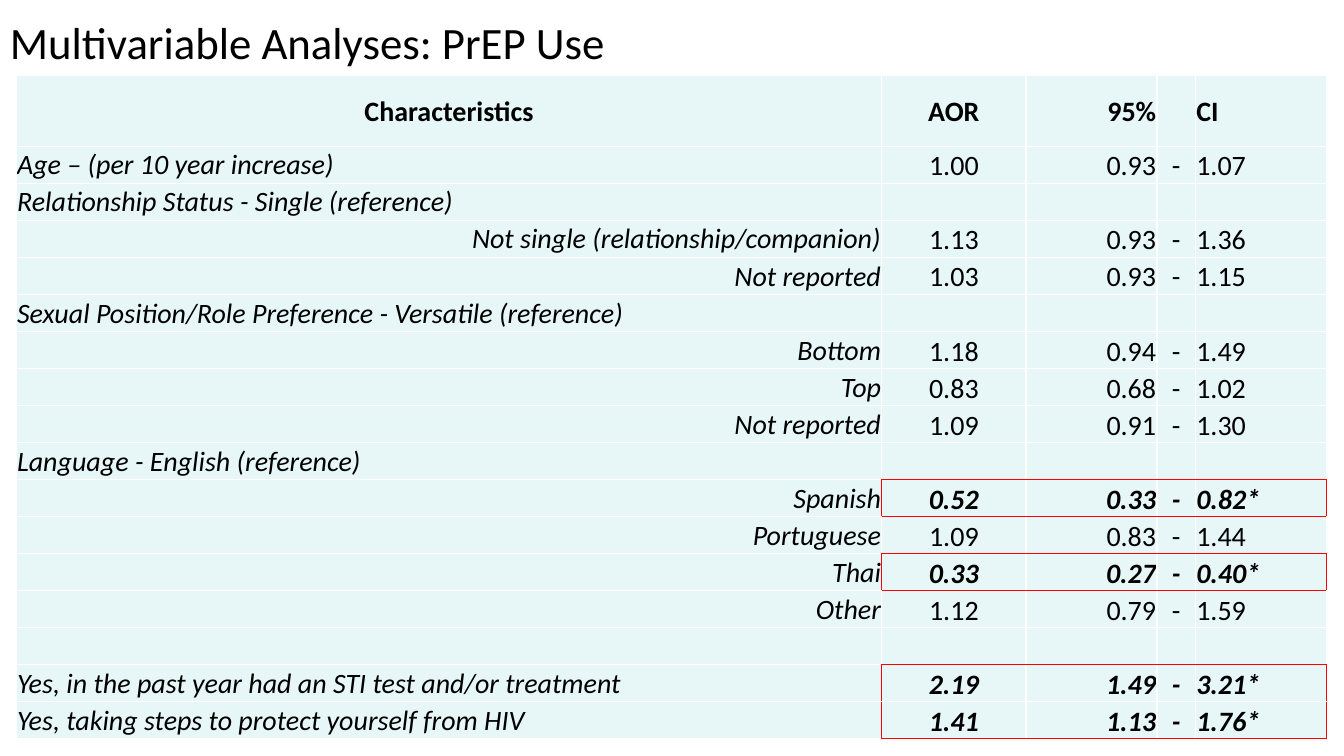
from lxml import etree
from pptx import Presentation
from pptx.dml.color import RGBColor
from pptx.enum.text import MSO_ANCHOR, PP_ALIGN
from pptx.oxml.ns import qn
from pptx.util import Cm, Pt

LEFT, CENTER, RIGHT = PP_ALIGN.LEFT, PP_ALIGN.CENTER, PP_ALIGN.RIGHT
MIDDLE, BOTTOM = MSO_ANCHOR.MIDDLE, MSO_ANCHOR.BOTTOM

BLACK, WHITE, RED, PALE_CYAN = "000000", "FFFFFF", "FF0000", "E7F7F8"
HEADER = ("Characteristics", "AOR", "95%", "", "CI")
HEADER_ALIGNS = (CENTER, CENTER, RIGHT, CENTER, LEFT)
COLUMN_WIDTHS = (21.8, 3.63, 3.3, 0.97, 3.3)
HEADER_HEIGHT = 1.78
RESULTS = [
    ("Age – (per 10 year increase)", LEFT, "1.00", "0.93", "1.07"),
    ("Relationship Status - Single (reference)", LEFT),
    ("Not single (relationship/companion)", RIGHT, "1.13", "0.93", "1.36"),
    ("Not reported", RIGHT, "1.03", "0.93", "1.15"),
    ("Sexual Position/Role Preference - Versatile (reference)", LEFT),
    ("Bottom", RIGHT, "1.18", "0.94", "1.49"),
    ("Top", RIGHT, "0.83", "0.68", "1.02"),
    ("Not reported", RIGHT, "1.09", "0.91", "1.30"),
    ("Language - English (reference)", LEFT),
    ("Spanish", RIGHT, "0.52", "0.33", "0.82*"),
    ("Portuguese", RIGHT, "1.09", "0.83", "1.44"),
    ("Thai", RIGHT, "0.33", "0.27", "0.40*"),
    ("Other", RIGHT, "1.12", "0.79", "1.59"),
    ("", LEFT),
    ("Yes, in the past year had an STI test and/or treatment", LEFT, "2.19", "1.49", "3.21*"),
    ("Yes, taking steps to protect yourself from HIV", LEFT, "1.41", "1.13", "1.76*"),
]


def color(hex_string):
    return RGBColor.from_string(hex_string)


def write(frame, text, size=20, align=LEFT, bold=False, italic=False, spacing=1.0):
    paragraph = frame.paragraphs[0]
    paragraph.alignment = align
    paragraph.line_spacing = spacing
    run = paragraph.add_run()
    run.text = text
    run.font.name = "Calibri"
    run.font.size = Pt(size)
    run.font.bold = bold
    run.font.italic = italic
    run.font.color.rgb = color(BLACK)


def add_title(slide, left, top, width, height):
    title = slide.shapes.add_textbox(Cm(left), Cm(top), Cm(width), Cm(height))
    title.text_frame.word_wrap = True
    title.text_frame.vertical_anchor = BOTTOM
    write(title.text_frame, "Multivariable Analyses: PrEP Use", size=32, spacing=0.9)


def is_significant(row, column):
    return 1 <= row <= len(RESULTS) and 1 <= column < len(HEADER) and RESULTS[row - 1][-1:][0] in SIGNIFICANT


SIGNIFICANT = {result[-1] for result in RESULTS if len(result) == 5 and result[-1].endswith("*")}


def draw_borders(cell, row, column):
    neighbors = {
        "a:lnL": (row, column - 1),
        "a:lnR": (row, column + 1),
        "a:lnT": (row - 1, column),
        "a:lnB": (row + 1, column),
    }
    properties = cell._tc.get_or_add_tcPr()
    for tag, neighbor in neighbors.items():
        on_outline = is_significant(row, column) != is_significant(*neighbor)
        border = etree.SubElement(properties, qn(tag), w=str(Pt(1)))
        fill = etree.SubElement(border, qn("a:solidFill"))
        etree.SubElement(fill, qn("a:srgbClr"), val=RED if on_outline else WHITE)


def fill_cell(cell, row, column, text, anchor, **text_format):
    draw_borders(cell, row, column)
    cell.fill.solid()
    cell.fill.fore_color.rgb = color(PALE_CYAN)
    cell.margin_left = cell.margin_right = cell.margin_top = Cm(0.02)
    cell.margin_bottom = 0
    cell.vertical_anchor = anchor
    if text:
        write(cell.text_frame, text, **text_format)


def add_results_table(slide, left, top, width, height):
    table = slide.shapes.add_table(
        len(RESULTS) + 1, len(HEADER), Cm(left), Cm(top), Cm(width), Cm(height)
    ).table
    table.first_row = table.horz_banding = False
    for column, share in zip(table.columns, COLUMN_WIDTHS):
        column.width = Cm(width * share / sum(COLUMN_WIDTHS))
    for row in table.rows:
        row.height = Cm((height - HEADER_HEIGHT) / len(RESULTS))
    table.rows[0].height = Cm(HEADER_HEIGHT)

    for column, (heading, align) in enumerate(zip(HEADER, HEADER_ALIGNS)):
        fill_cell(table.cell(0, column), 0, column, heading, MIDDLE, align=align, bold=True)
    for row, (label, label_align, *estimate) in enumerate(RESULTS, start=1):
        fill_cell(table.cell(row, 0), row, 0, label, MIDDLE, align=label_align, italic=True)
        ratio, low, high = estimate or ("", "", "")
        figures = (ratio, low, "-" if estimate else "", high)
        for column, figure in enumerate(figures, start=1):
            emphasis = is_significant(row, column)
            fill_cell(table.cell(row, column), row, column, figure, BOTTOM,
                      align=HEADER_ALIGNS[column], bold=emphasis, italic=emphasis)


def main():
    presentation = Presentation()
    presentation.slide_width = Cm(33.87)
    presentation.slide_height = Cm(19.05)
    slide = presentation.slides.add_slide(presentation.slide_layouts[6])
    add_title(slide, 0, -0.43, 26.67, 2.29)
    add_results_table(slide, 0.41, 1.91, 33.02, 16.71)
    presentation.save("out.pptx")


if __name__ == "__main__":
    main()
